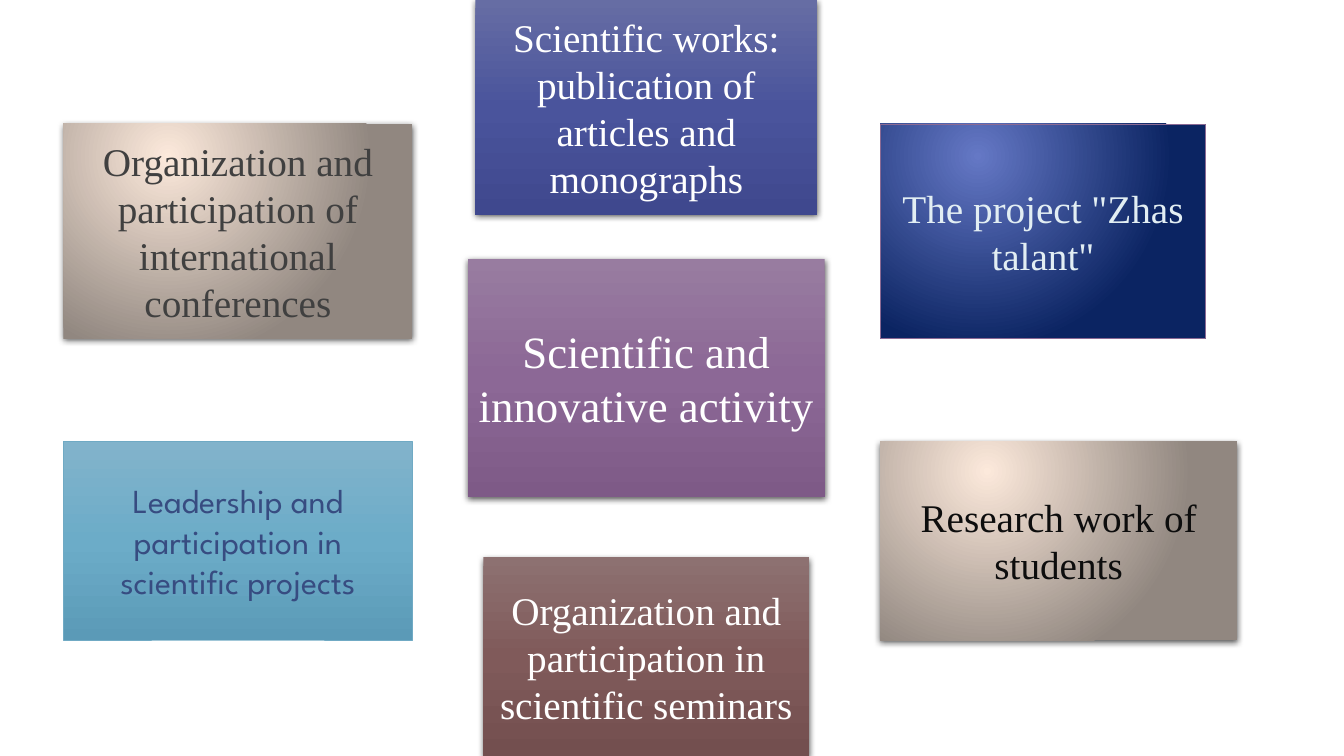
from pptx import Presentation
from pptx import util as u
from pptx.dml.color import RGBColor
from pptx.enum import shapes, text
from pptx.oxml import parse_xml
from pptx.oxml.ns import nsdecls

# Theme: gradient stops, ink colours, fonts and type sizes
THEME = {
    "sand": ["FCE9DB", "918780"],
    "navy": ["6578C5", "0B2462"],
    "indigo": ["666DA4", "4A549C", "3F488E"],
    "brown": ["8D7171", "805A5A", "734F4F"],
    "sky": ["82B3CB", "6CACC8", "5B9AB7"],
    "plum": ["987CA0", "8C6896", "7E5A87"],
    "white": "FFFFFF", "grey": "404040", "black": "0D0D0D",
    "ice": "E2EEF3", "ink": "374C81",
    "sky_edge": "70AAC4", "plum_edge": "8B6A94", "shadow": "000000",
    "serif": "Times New Roman", "sans": "League Spartan",
    "hub": 32, "card": 28, "small": 24,
}

# Content: text, column, row, width, fill, ink, format options
CARDS = [
    ("Organization and participation of international conferences",
     "left", "upper", 3.46, "sand", "grey", {}),
    ("Scientific works: publication of articles and monographs",
     "centre", "top", 3.39, "indigo", "white", {}),
    ("Organization and participation in scientific seminars",
     "centre", "bottom", 3.23, "brown", "white", {}),
    ("Leadership and participation in scientific projects",
     "left", "lower", 3.46, "sky", "ink",
     {"size": "small", "font": "sans", "edge": "sky_edge"}),
    ("Scientific and innovative activity",
     "centre", "middle", 3.54, "plum", "white", {"size": "hub"}),
    ('The project "Zhas talant"',
     "right", "upper", 3.23, "navy", "ice", {"edge": "plum_edge"}),
    ("Research work of students",
     "right", "lower", 3.54, "sand", "black", {}),
]

# Layout: left edges of the side columns, axis of the centre one, row tops and heights
LEFT = {"left": 0.63, "right": 8.73}
AXIS = 6.41
ROWS = {"top": (0, 2.13), "upper": (1.23, 2.13), "middle": (2.57, 2.36),
        "lower": (4.38, 1.97), "bottom": (5.53, 1.97)}


def set_gradient(sp, colors):
    """Three colours run top to bottom; two spread out from a highlight."""
    step = 100000 // (len(colors) - 1)
    stops = "".join(f'<a:gs pos="{i * step}"><a:srgbClr val="{c}"/></a:gs>'
                    for i, c in enumerate(colors))
    if len(colors) == 2:
        way = ('<a:path path="circle"><a:fillToRect l="30000" t="30000" '
               'r="70000" b="100000"/></a:path>')
    else:
        way = '<a:lin ang="5400000" scaled="0"/>'
    sp.fill.background()
    spPr = sp._element.spPr
    old = spPr.find("{*}noFill")
    spPr.replace(old, parse_xml(
        f'<a:gradFill {nsdecls("a")} rotWithShape="1">'
        f'<a:gsLst>{stops}</a:gsLst>{way}</a:gradFill>'))


def add_shadow(sp):
    sp._element.spPr.find("{*}effectLst").append(parse_xml(
        f'<a:outerShdw {nsdecls("a")} blurRad="{u.Pt(4.5)}" dist="{u.Pt(1.5)}" '
        f'dir="5400000" algn="ctr" rotWithShape="0">'
        f'<a:srgbClr val="{THEME["shadow"]}"><a:alpha val="63000"/></a:srgbClr>'
        f'</a:outerShdw>'))


def write(sp, words, ink, size="card", font="serif"):
    tf = sp.text_frame
    tf.word_wrap = True
    tf.vertical_anchor = text.MSO_ANCHOR.MIDDLE
    p = tf.paragraphs[0]
    p.alignment = text.PP_ALIGN.CENTER
    r = p.add_run()
    r.text = words
    r.font.name = THEME[font]
    r.font.size = u.Pt(THEME[size])
    r.font.color.rgb = RGBColor.from_string(THEME[ink])


def add_card(s, words, column, row, width, fill, ink, edge=None, **fmt):
    top, height = ROWS[row]
    left = LEFT.get(column, AXIS - width / 2)
    sp = s.shapes.add_shape(shapes.MSO_SHAPE.RECTANGLE, u.Inches(left),
                            u.Inches(top), u.Inches(width), u.Inches(height))
    sp.shadow.inherit = False
    set_gradient(sp, THEME[fill])
    # Outlined cards lie flat, the others cast a shadow
    if edge:
        sp.line.color.rgb = RGBColor.from_string(THEME[edge])
        sp.line.width = u.Pt(0.5)
    else:
        sp.line.fill.background()
        add_shadow(sp)
    write(sp, words, ink, **fmt)


def main():
    prs = Presentation()
    prs.slide_width, prs.slide_height = u.Inches(13.33), u.Inches(7.5)
    s = prs.slides.add_slide(prs.slide_layouts[6])
    for *card, options in CARDS:
        add_card(s, *card, **options)
    prs.save("out.pptx")


if __name__ == "__main__":
    main()
